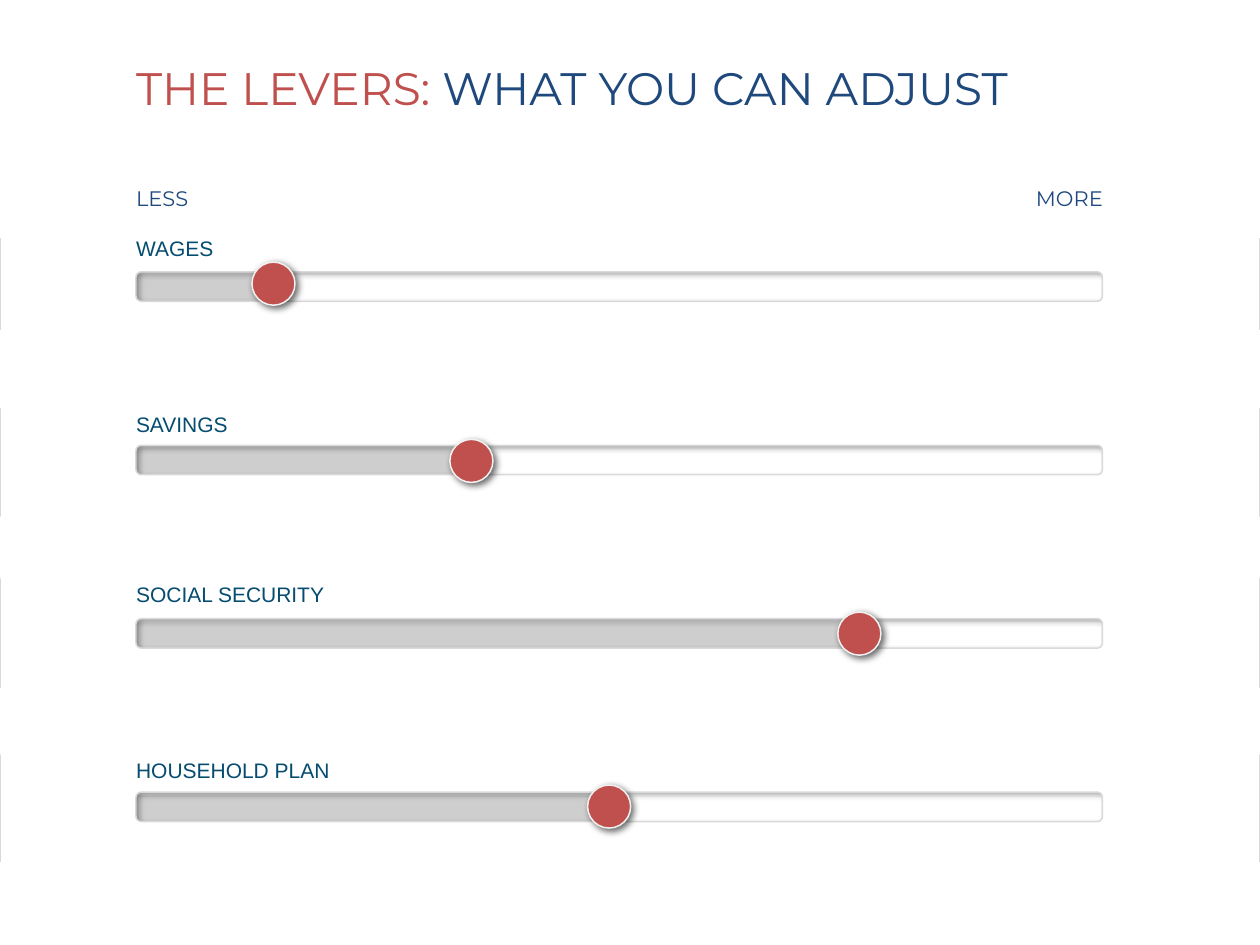
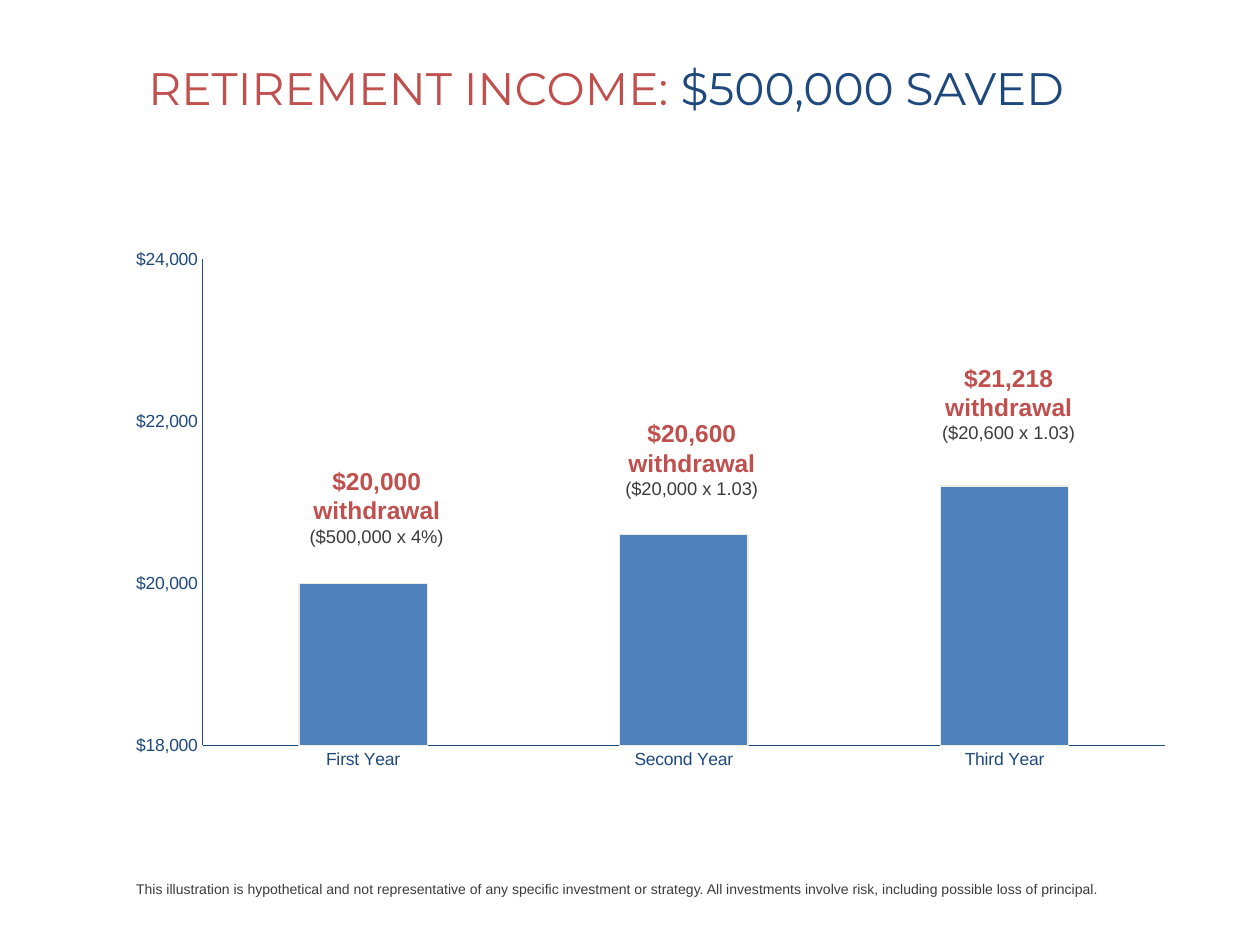
"""Build two retirement planning slides: adjustable levers and a withdrawal chart."""
from math import cos, radians, sin

from lxml.etree import SubElement
from pptx import Presentation
from pptx.chart.data import CategoryChartData
from pptx.dml.color import RGBColor
from pptx.enum.chart import XL_CHART_TYPE, XL_TICK_MARK
from pptx.enum.shapes import MSO_SHAPE
from pptx.enum.text import MSO_ANCHOR, MSO_AUTO_SIZE, PP_ALIGN
from pptx.oxml import parse_xml
from pptx.oxml.ns import nsdecls, qn
from pptx.util import Pt

COLORS = {
    "red": "C0504D", "navy": "1F497D", "teal": "054C70", "text": "3B3B3B",
    "white": "FFFFFF", "track": "CECECE", "edge": "D9D9D9", "ring": "F2F2F2",
    "bar": "4F81BD", "bar_edge": "EEECE1", "black": "000000",
}
COLORS = {name: RGBColor.from_string(value) for name, value in COLORS.items()}
LEFT = 77.75
TITLE_BOX = (LEFT, 23, 588.25, 58.3)


def add_text(slide, box, runs, anchor=MSO_ANCHOR.TOP, wrap=True, margins=(0, 0, 0, 0)):
    """Add a text box of (text, size, font, colour, bold) runs and return its paragraph."""
    text_frame = slide.shapes.add_textbox(*map(Pt, box)).text_frame
    text_frame.word_wrap = wrap
    text_frame.auto_size = MSO_AUTO_SIZE.NONE if wrap else MSO_AUTO_SIZE.SHAPE_TO_FIT_TEXT
    text_frame.vertical_anchor = anchor
    (text_frame.margin_left, text_frame.margin_top,
     text_frame.margin_right, text_frame.margin_bottom) = map(Pt, margins)
    paragraph = text_frame.paragraphs[0]
    for index, (text, size, font, color, bold) in enumerate(runs):
        if index and not runs[index - 1][0].endswith(" "):
            paragraph.add_line_break()
        run = paragraph.add_run()
        run.text = text
        run.font.size, run.font.name, run.font.bold = Pt(size), font, bold
        run.font.color.rgb = COLORS[color]
    return paragraph


def style_shape(shape, fill, line=None, shadow=None):
    """Set fill, outline and an optional (alpha, blur, distance, angle) shadow."""
    shape.fill.solid()
    shape.fill.fore_color.rgb = COLORS[fill]
    if line:
        shape.line.color.rgb = COLORS[line]
        shape.line.width = Pt(0.85)
    else:
        shape.line.fill.background()
    shape.shadow.inherit = False
    if shadow:
        alpha, blur, distance, angle = shadow
        effects = shape.element.spPr.find(qn("a:effectLst"))
        outer = SubElement(effects, qn("a:outerShdw"), blurRad=str(Pt(blur)),
                           dist=str(Pt(distance)), dir=str(angle * 60000),
                           algn="ctr", rotWithShape="0")
        color = SubElement(outer, qn("a:srgbClr"), val=str(COLORS["black"]))
        SubElement(color, qn("a:alpha"), val=str(alpha * 1000))


presentation = Presentation()
presentation.slide_width, presentation.slide_height = Pt(720), Pt(540)
titles = [
    ("THE LEVERS: ", "WHAT YOU CAN ADJUST", (0, 0, 0, 0)),
    ("RETIREMENT INCOME: ", "$500,000 SAVED", (7.2, 3.6, 7.2, 3.6)),
]
slides = []
for topic, detail, margins in titles:
    slide = presentation.slides.add_slide(presentation.slide_layouts[6])
    runs = [(topic, 26, "Montserrat", "red", False), (detail, 26, "Montserrat", "navy", False)]
    paragraph = add_text(slide, TITLE_BOX, runs, MSO_ANCHOR.MIDDLE, margins=margins)
    paragraph.line_spacing = 0.85
    slides.append(slide)
levers_slide, income_slide = slides

KNOB_SIZE = 24.6
WINDOW_RIGHT, WINDOW_HEIGHT, CORNER = 630, 16.8, 3
levers = [
    ("WAGES", 134.7, 44.6, 144, 149.8),
    ("SAVINGS", 234.9, 53.3, 257.1, 251.1),
    ("SOCIAL SECURITY", 332.1, 108.7, 478.8, 349.8),
    ("HOUSEHOLD PLAN", 432.7, 111.6, 335.8, 448.6),
]
for row, (label, label_top, label_width, knob_left, knob_top) in enumerate(levers):
    top = 131.2 + 99.1 * row
    track_width = knob_left + KNOB_SIZE / 2 - 72
    track = levers_slide.shapes.add_shape(
        MSO_SHAPE.RECTANGLE, Pt(72), Pt(top + 26.6), Pt(track_width), Pt(14.4))
    style_shape(track, "track", shadow=(40, 5, 0, 0))

    window_top = top + 24.2
    window_bottom = window_top + WINDOW_HEIGHT
    corners = [
        (LEFT + CORNER, window_top + CORNER, 270),
        (LEFT + CORNER, window_bottom - CORNER, 180),
        (WINDOW_RIGHT - CORNER, window_bottom - CORNER, 90),
        (WINDOW_RIGHT - CORNER, window_top + CORNER, 0),
    ]
    window = [
        (Pt(x + CORNER * cos(radians(start - turn))), Pt(y + CORNER * sin(radians(start - turn))))
        for x, y, start in corners for turn in range(0, 91, 15)
    ]
    builder = levers_slide.shapes.build_freeform(*window[0])
    builder.add_line_segments(window[1:], close=True)
    builder.move_to(0, Pt(top))
    bottom = top + 66.4
    builder.add_line_segments(
        [(Pt(720), Pt(top)), (Pt(720), Pt(bottom)), (0, Pt(bottom))], close=True)
    style_shape(builder.convert_to_shape(), "white", "edge", (34, 3, 1, 45))

for top, bottom in [(123.8, 136.1), (188.6, 233.3), (295.2, 330.5), (393.1, 431.3), (492.5, 504.7)]:
    cover = levers_slide.shapes.add_shape(
        MSO_SHAPE.RECTANGLE, 0, Pt(top), Pt(720), Pt(bottom - top))
    style_shape(cover, "white")

for label, label_top, label_width, knob_left, knob_top in levers:
    knob = levers_slide.shapes.add_shape(
        MSO_SHAPE.OVAL, Pt(knob_left), Pt(knob_top), Pt(KNOB_SIZE), Pt(KNOB_SIZE))
    style_shape(knob, "red", "ring", (58, 4, 2, 45))
    paragraph = add_text(levers_slide, (LEFT, label_top, label_width, 14.4),
                         [(label, 12, "Arial", "teal", False)], wrap=False)
    paragraph.space_after = Pt(10)

for label, left, width in [("LESS", LEFT, 34.6), ("MORE", 592, 39.6)]:
    paragraph = add_text(levers_slide, (left, 105.8, width, 14.4),
                         [(label, 12, "Montserrat", "navy", False)], wrap=False)
    paragraph.space_after = Pt(10)

chart_data = CategoryChartData()
chart_data.categories = ["First Year", "Second Year", "Third Year"]
chart_data.add_series("Series 1", (20000, 20600, 21200))
chart = income_slide.shapes.add_chart(
    XL_CHART_TYPE.COLUMN_CLUSTERED, Pt(LEFT), Pt(108), Pt(588.25), Pt(356.4), chart_data).chart
chart.has_legend = chart.has_title = False
chart.font.size, chart.font.name = Pt(10), "Arial"
chart.font.color.rgb = COLORS["navy"]
for axis in (chart.category_axis, chart.value_axis):
    axis.has_major_gridlines = False
    axis.major_tick_mark = axis.minor_tick_mark = XL_TICK_MARK.NONE
    axis.format.line.color.rgb = COLORS["navy"]
    axis.format.line.width = Pt(0.5)
value_axis = chart.value_axis
value_axis.minimum_scale, value_axis.maximum_scale, value_axis.major_unit = 18000, 24000, 2000
value_axis.tick_labels.number_format = '"$"#,##0'
value_axis.tick_labels.number_format_is_linked = False
plot = chart.plots[0]
plot.gap_width = 150
plot.vary_by_categories = False
series = plot.series[0]
series.format.fill.solid()
series.format.fill.fore_color.rgb = COLORS["bar"]
series.format.line.color.rgb = COLORS["bar_edge"]
series.format.line.width = Pt(0.75)
plot_area = chart.element.find(".//" + qn("c:plotArea"))
for old_layout in plot_area.findall(qn("c:layout")):
    plot_area.remove(old_layout)
plot_area.insert(0, parse_xml(
    f'<c:layout {nsdecls("c")}><c:manualLayout><c:layoutTarget val="inner"/>'
    '<c:xMode val="edge"/><c:yMode val="edge"/><c:x val="0.079"/><c:y val="0.113"/>'
    '<c:w val="0.936"/><c:h val="0.779"/></c:manualLayout></c:layout>'))

withdrawals = [
    ("$20,000 withdrawal", "($500,000 x 4%)", 164.9, 256.3, 100.8),
    ("$20,600 withdrawal", "($20,000 x 1.03)", 337, 229, 116.6),
    ("$21,218 withdrawal", "($20,600 x 1.03)", 517.7, 197.3, 117.4),
]
for amount, formula, left, top, width in withdrawals:
    runs = [(amount, 14, "Arial", "red", True), (formula, 10.5, "Arial", "text", False)]
    paragraph = add_text(income_slide, (left, top, width, 66.2), runs, MSO_ANCHOR.MIDDLE)
    paragraph.alignment = PP_ALIGN.CENTER
    paragraph.space_after = Pt(6)

disclaimer = ("This illustration is hypothetical and not representative of any specific investment "
              "or strategy. All investments involve risk, including possible loss of principal.")
add_text(income_slide, (LEFT, 500.4, 589, 39.6), [(disclaimer, 8, "Arial", "text", False)],
         MSO_ANCHOR.BOTTOM, margins=(0, 0, 0, 27.4))

presentation.save("out.pptx")
